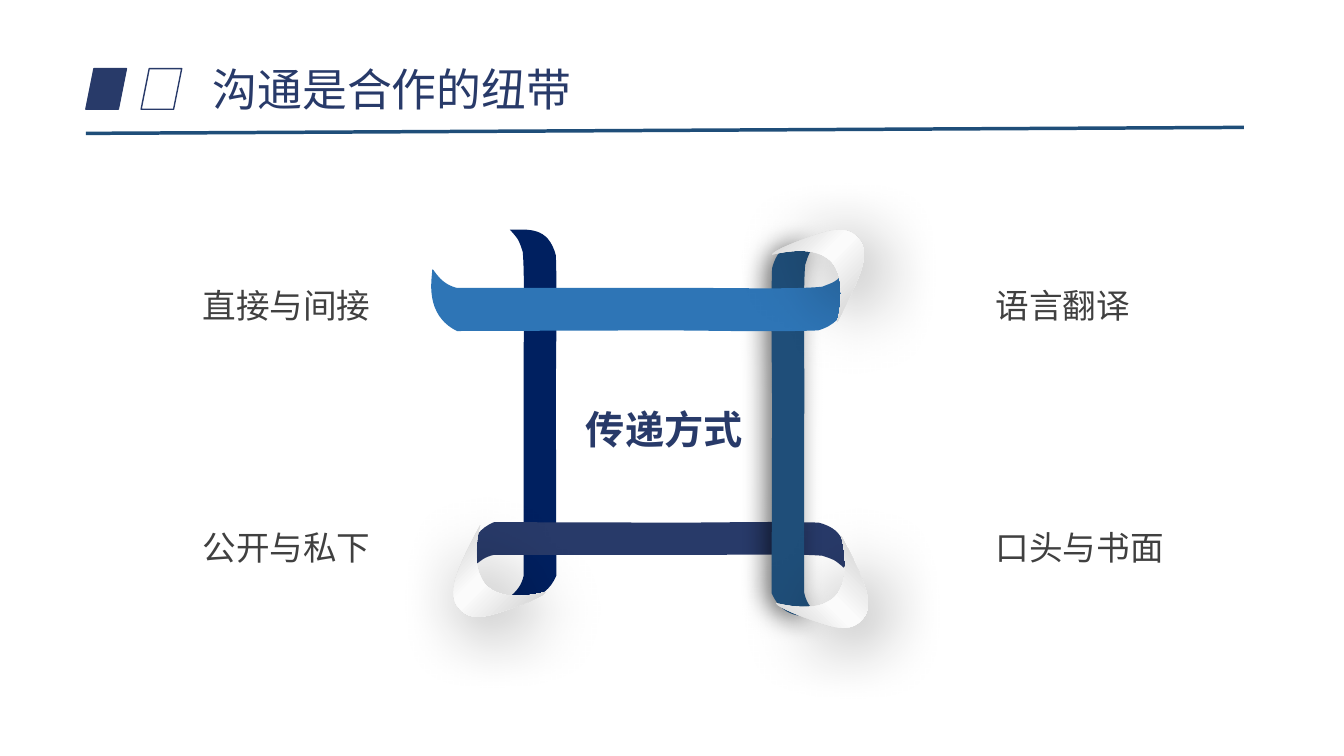
from itertools import chain

from lxml import etree
from pptx import Presentation
from pptx.dml.color import RGBColor
from pptx.enum import shapes, text
from pptx.oxml.ns import qn
from pptx.util import Pt

COLORS = {
    "navy": "283A69", "midnight": "002060", "teal": "1F4E79", "blue": "2E75B6",
    "grey": "404040", "black": "000000",
}
CURL_STOPS = [(10, "D9D9D9"), (42, "FBFBFB"), (51, "F8F8F8"), (87, "D9D9D9")]
STRAP_SHADOW = {"opacity": 55, "blur": 18, "dist": 5, "angle": 165}
CURL_SHADOW = {"opacity": 48, "blur": 49, "dist": 12, "angle": 45}

STRAP = [
    [(1, .98)],
    [(.97, .77), (.97, .79), (.94, .71)],
    [(.87, .66), (.68, .7), (.54, .69)],
    [(.06, .69)],
    [(.01, .77), (0, 1.09), (0, .96)],
    [(0, .85), (-.02, .26), (.06, 0)],
    [(.54, .01)],
    [(.68, .01), (.81, -.02), (.93, .01)],
    [(1.01, .17), (1, .6), (1, .98)],
]
CURL = [
    [(.01, .63)],
    [(-.02, .78), (.01, .86), (.07, .92)],
    [(.13, .98), (.21, 1.02), (.36, .99)],
    [(.52, .96), (1, .78), (1, .73)],
    [(.75, .79), (.51, .8), (.36, .66)],
    [(.22, .52), (.23, .22), (.29, 0)],
    [(.23, .11), (.04, .47), (.01, .63)],
]

STRAPS = [
    ("midnight", (397.4, 426.9), (0, -262.8), (-33.8, 0), None),
    ("navy", (337, 373), (266.4, 0), (0, 33.8), None),
    ("teal", (551.2, 439.5), (0, -266.4), (33.8, 0), STRAP_SHADOW),
    ("blue", (308.7, 236.5), (296.5, 0), (0, -44.6), None),
]
CURL_SIZE = 65.5
CURLS = [((324, 375.1), 1, 1), ((619.9, 383), -1, 1), ((617, 229.7), -1, -1)]

LABEL_SIZE = 24
LABEL_COLUMNS = (137.5, 704.2)
LABEL_ROWS = (200.2, 373)
LABELS = [("直接与间接", "语言翻译"), ("公开与私下", "口头与书面")]


def rgb(name):
    return RGBColor.from_string(COLORS[name])


def set_all(obj, values):
    for name, value in values.items():
        setattr(obj, name, value)


def bend(sp, segments):
    lines = list(sp._element.spPr.iter(qn("a:lnTo")))
    for seg in segments[1:]:
        used, lines = lines[:len(seg)], lines[len(seg):]
        if len(seg) == 3:
            curve = etree.Element(qn("a:cubicBezTo"))
            used[0].addprevious(curve)
            for line in used:
                curve.append(line[0])
                line.getparent().remove(line)


def add_outline(s, segments, origin, along, across):
    points = [
        tuple(Pt(origin[n] + x * along[n] + y * across[n]) for n in (0, 1))
        for x, y in chain.from_iterable(segments)
    ]
    builder = s.shapes.build_freeform(*points[0], scale=1.0)
    builder.add_line_segments(points[1:], close=True)
    sp = builder.convert_to_shape()
    bend(sp, segments)
    sp.line.fill.background()
    sp.shadow.inherit = False
    return sp


def add_shadow(sp, opacity, blur, dist, angle):
    effects = sp._element.spPr.find(qn("a:effectLst"))
    shadow = etree.SubElement(
        effects, qn("a:outerShdw"), blurRad=str(Pt(blur)), dist=str(Pt(dist)),
        dir=str(angle * 60000), algn="ctr", rotWithShape="0")
    color = etree.SubElement(shadow, qn("a:srgbClr"), val=COLORS["black"])
    etree.SubElement(color, qn("a:alpha"), val=str(opacity * 1000))


def add_strap(s, color, origin, along, across, shadow):
    sp = add_outline(s, STRAP, origin, along, across)
    sp.fill.solid()
    sp.fill.fore_color.rgb = rgb(color)
    if shadow:
        add_shadow(sp, **shadow)


def add_curl(s, origin, x_dir, y_dir):
    sp = add_outline(s, CURL, origin, (x_dir * CURL_SIZE, 0), (0, y_dir * CURL_SIZE))
    sp.fill.gradient()
    sp.fill.gradient_angle = 315 if x_dir == y_dir else 45
    stops = sp._element.spPr.find(qn("a:gradFill")).find(qn("a:gsLst"))
    for stop in list(stops):
        stops.remove(stop)
    for pos, color in CURL_STOPS:
        stop = etree.SubElement(stops, qn("a:gs"), pos=str(pos * 1000))
        etree.SubElement(stop, qn("a:srgbClr"), val=color)
    add_shadow(sp, **CURL_SHADOW)


def write(sp, words, color, font, frame, para):
    tf = sp.text_frame
    set_all(tf, {"auto_size": text.MSO_AUTO_SIZE.SHAPE_TO_FIT_TEXT, **frame})
    p = tf.paragraphs[0]
    set_all(p, para)
    r = p.add_run()
    r.text = words
    set_all(r.font, {"name": "Arial", **font})
    r.font.color.rgb = rgb(color)


def add_label(s, words, color, box, font, anchor, para):
    sp = s.shapes.add_textbox(*map(Pt, box))
    write(sp, words, color, font, {"word_wrap": False, "vertical_anchor": anchor}, para)


def add_title(s, words):
    sp = s.shapes.title
    set_all(sp, {"left": Pt(144.7), "top": Pt(40.3), "width": Pt(349.2), "height": Pt(46)})
    write(sp, words, "navy", {"size": Pt(32)},
          {"word_wrap": True, "vertical_anchor": text.MSO_ANCHOR.TOP},
          {"alignment": text.PP_ALIGN.LEFT})


def add_rule(s):
    line = s.shapes.add_connector(
        shapes.MSO_CONNECTOR.STRAIGHT, Pt(61.4), Pt(95.3), Pt(888.5), Pt(91))
    line.line.color.rgb = rgb("teal")
    line.line.width = Pt(2.5)
    etree.SubElement(line._element.spPr, qn("a:effectLst"))


def add_marker(s, left, filled):
    sp = s.shapes.add_shape(
        shapes.MSO_SHAPE.FLOWCHART_DATA, Pt(left), Pt(49), Pt(29), Pt(29))
    sp.shadow.inherit = False
    if filled:
        sp.fill.solid()
        sp.fill.fore_color.rgb = rgb("navy")
    else:
        sp.fill.background()
    sp.line.color.rgb = rgb("navy")
    sp.line.width = Pt(1)


def main():
    prs = Presentation()
    set_all(prs, {"slide_width": Pt(960), "slide_height": Pt(540)})
    s = prs.slides.add_slide(prs.slide_layouts[5])

    for strap in STRAPS:
        add_strap(s, *strap)
    for curl in CURLS:
        add_curl(s, *curl)

    add_label(s, "传递方式", "navy", (410.8, 277.7, 127.4, 46.8),
              {"size": Pt(28), "bold": True}, text.MSO_ANCHOR.MIDDLE,
              {"alignment": text.PP_ALIGN.CENTER, "line_spacing": 1.3})
    for top, row in zip(LABEL_ROWS, LABELS):
        for left, words in zip(LABEL_COLUMNS, row):
            width = len(words) * LABEL_SIZE + 14.4
            add_label(s, words, "grey", (left, top, width, 36),
                      {"size": Pt(LABEL_SIZE)}, text.MSO_ANCHOR.TOP,
                      {"alignment": text.PP_ALIGN.LEFT})

    add_title(s, "沟通是合作的纽带")
    add_rule(s)
    for left, filled in ((61.3, True), (100.8, False)):
        add_marker(s, left, filled)

    prs.save("out.pptx")


if __name__ == "__main__":
    main()
